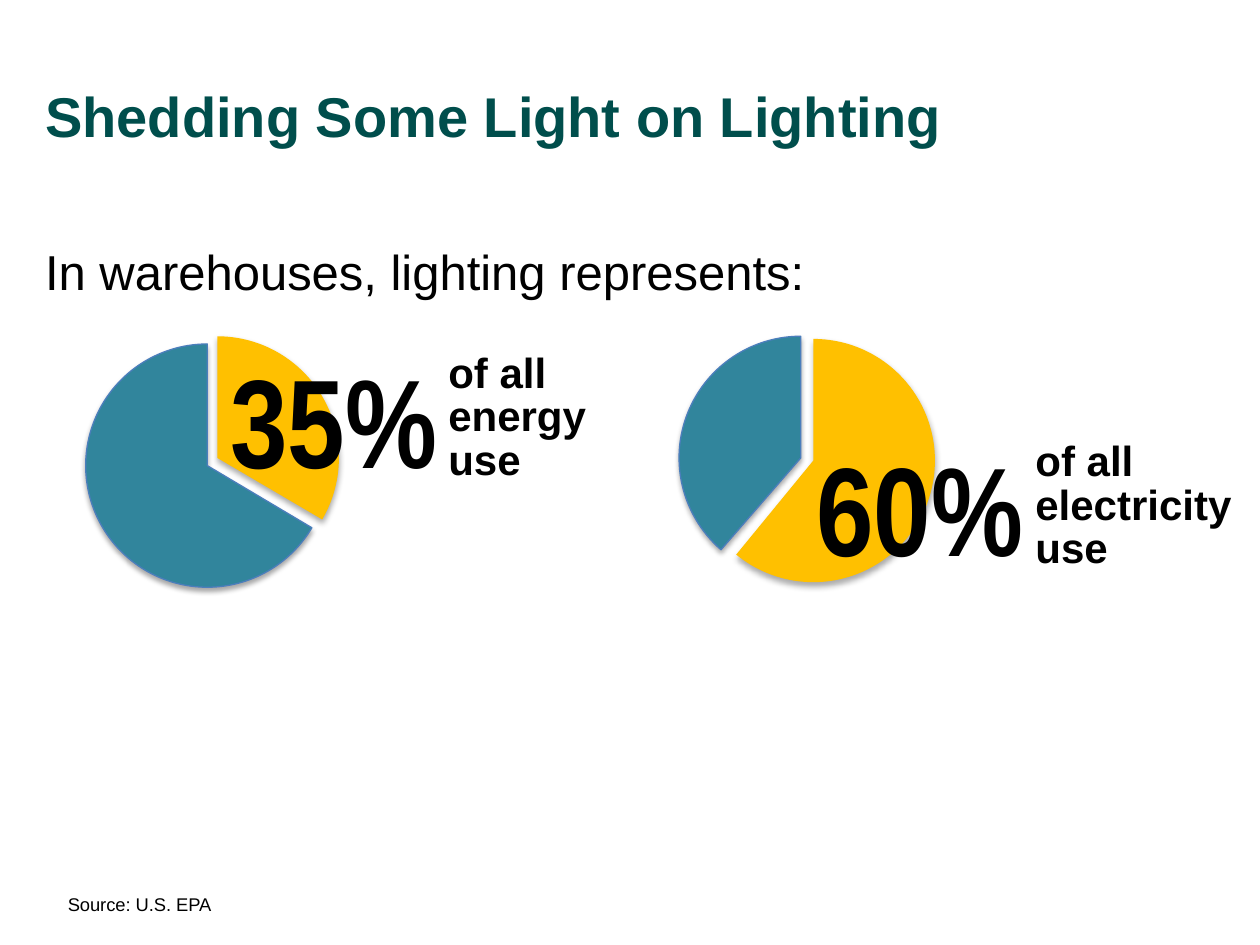
"""Build the slide on lighting's share of warehouse energy use."""
from dataclasses import dataclass

from lxml.etree import SubElement
from pptx import Presentation
from pptx.dml.color import RGBColor
from pptx.enum.shapes import MSO_SHAPE
from pptx.enum.text import MSO_ANCHOR, MSO_AUTO_SIZE, PP_ALIGN
from pptx.oxml.ns import qn
from pptx.util import Pt


@dataclass(frozen=True)
class Theme:
    font: str = "Arial"
    narrow: str = "Arial Narrow"
    ink: str = "000000"
    heading: str = "004E4C"
    rest: str = "31859C"
    rest_line: str = "4B7EBC"
    lighting: str = "FFC000"
    title: float = 32
    body: float = 28
    figure: float = 72
    label: float = 24
    source: float = 10.5


def write(tf, text, *, size, color, font, bold=False, spacing=None):
    tf.word_wrap = True
    p = tf.paragraphs[0]
    p.alignment = PP_ALIGN.LEFT
    p.space_before = Pt(0)
    if spacing is not None:
        p.line_spacing = spacing
    r = p.add_run()
    r.text = text
    r.font.size = Pt(size)
    r.font.name = font
    r.font.bold = bold
    r.font.color.rgb = RGBColor.from_string(color)


class Deck:
    def __init__(self, prs, theme):
        self.theme = theme
        self.s = prs.slides.add_slide(prs.slide_layouts[5])

    def title(self, text, x, y, w, h):
        sp = self.s.shapes.title
        sp.left, sp.top, sp.width, sp.height = Pt(x), Pt(y), Pt(w), Pt(h)
        tf = sp.text_frame
        tf.auto_size = MSO_AUTO_SIZE.NONE
        tf.vertical_anchor = MSO_ANCHOR.MIDDLE
        write(tf, text, size=self.theme.title, color=self.theme.heading,
              font=self.theme.font, bold=True, spacing=0.88)

    def text(self, text, x, y, w, h, size, font=None, grow=True, **fmt):
        tf = self.s.shapes.add_textbox(Pt(x), Pt(y), Pt(w), Pt(h)).text_frame
        write(tf, text, size=size, color=self.theme.ink,
              font=font or self.theme.font, **fmt)
        tf.auto_size = MSO_AUTO_SIZE.SHAPE_TO_FIT_TEXT if grow else MSO_AUTO_SIZE.NONE

    def slice(self, grp, x, y, start, fill, shadow, line=None, flip=False):
        sp = grp.shapes.add_shape(MSO_SHAPE.PIE, Pt(x), Pt(y), Pt(139), Pt(139))
        sp.adjustments[0] = start * 0.6
        sp.adjustments[1] = 162
        sp.fill.solid()
        sp.fill.fore_color.rgb = RGBColor.from_string(fill)
        if line:
            sp.line.color.rgb = RGBColor.from_string(line)
            sp.line.width = Pt(0.75)
        else:
            sp.line.fill.background()
        if flip:
            sp._element.spPr.find(qn("a:xfrm")).set("flipH", "1")
        self.shadow(sp, *shadow)

    def shadow(self, sp, alpha, blur, dist):
        sp.shadow.inherit = False
        effects = sp._element.spPr.find(qn("a:effectLst"))
        outer = SubElement(effects, qn("a:outerShdw"), blurRad=str(Pt(blur)),
                           dist=str(Pt(dist)), dir="5400000", rotWithShape="0")
        clr = SubElement(outer, qn("a:srgbClr"), val=self.theme.ink)
        SubElement(clr, qn("a:alpha"), val=str(alpha * 1000))

    def pie(self, rest, lighting):
        t = self.theme
        grp = self.s.shapes.add_group_shape()
        self.slice(grp, *rest, t.rest, (35, 3.1, 1.8), line=t.rest_line)
        self.slice(grp, *lighting, t.lighting, (32, 3.5, 2.2), flip=True)

    def share(self, figure, label, x, y, gap):
        t = self.theme
        self.text(figure, x, y, 148.3, 94.3, t.figure, font=t.narrow, bold=True)
        self.text(label, x + gap, y + 5.8, 139, 82.8, t.label, bold=True,
                  spacing=Pt(25))


def main():
    prs = Presentation()
    prs.slide_width, prs.slide_height = Pt(720), Pt(540)
    theme = Theme()
    deck = Deck(prs, theme)
    deck.title("Shedding Some Light on Lighting", 18.7, 28.1, 681.1, 80.6)
    deck.text("In warehouses, lighting represents:", 18.7, 134.6, 681.1, 46.1,
              theme.body, grow=False)
    deck.pie(rest=(49, 196.6, 30.72), lighting=(54.7, 192.2, 149.59))
    deck.pie(rest=(388.1, 192.2, 130.95), lighting=(395.3, 193.7, 50.66))
    deck.share("35%", "of all energy use", 124.6, 192.2, gap=124.5)
    deck.share("60%", "of all electricity use", 459.4, 242.6, gap=125.2)
    deck.text("Source: U.S. EPA", 31.7, 506.9, 268.6, 20.9, theme.source)
    prs.save("out.pptx")


if __name__ == "__main__":
    main()
